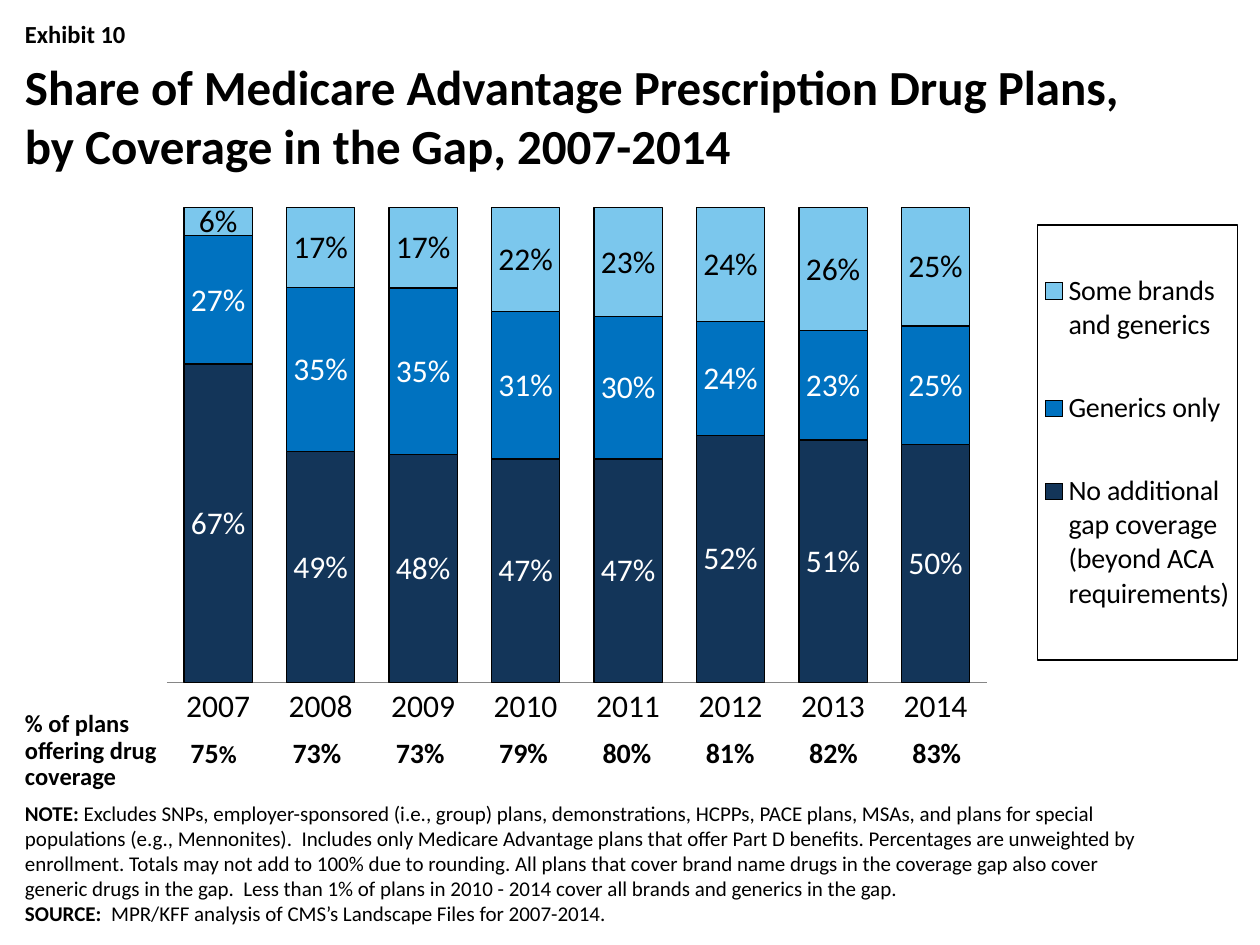
import pptx
import pptx.chart.data
import pptx.dml.color
import pptx.enum.chart
import pptx.enum.text
import pptx.oxml
import pptx.util

PX = 9144
FONT = "Calibri"
BLACK = "000000"
ANCHOR = pptx.enum.text.MSO_ANCHOR
ALIGN = pptx.enum.text.PP_ALIGN
NS = ('xmlns:c="http://schemas.openxmlformats.org/drawingml/2006/chart" '
      'xmlns:a="http://schemas.openxmlformats.org/drawingml/2006/main"')


def rgb(value):
    return pptx.dml.color.RGBColor.from_string(value)


def add_text(paragraphs, x, y, w, h, size=14, anchor=ANCHOR.TOP, align=ALIGN.LEFT, spacing=None):
    s = slide.shapes.add_textbox(x * PX, y * PX, w * PX, h * PX)
    tf = s.text_frame
    tf.word_wrap = True
    tf.vertical_anchor = anchor
    for i, runs in enumerate(paragraphs):
        p = tf.add_paragraph() if i else tf.paragraphs[0]
        p.alignment = align
        p.line_spacing = spacing
        for text, bold, *own_size in runs:
            for j, line in enumerate(text.split("\n")):
                if j:
                    p.add_line_break()
                r = p.add_run()
                r.text = line
                r.font.name = FONT
                r.font.size = pptx.util.Pt(own_size[0] if own_size else size)
                r.font.bold = bold
                r.font.color.rgb = rgb(BLACK)


prs = pptx.Presentation()
prs.slide_width = 1000 * PX
prs.slide_height = 750 * PX
slide = prs.slides.add_slide(prs.slide_layouts[6])

add_text([[("Exhibit 10", True)]], 10, 10, 980, 34)

data = pptx.chart.data.CategoryChartData(number_format="0%")
data.categories = [str(year) for year in range(2007, 2015)]
series = [
    ("No additional gap coverage (beyond ACA requirements)", "133559", "FFFFFF",
     [0.67, 0.49, 0.48, 0.47, 0.47, 0.52, 0.51, 0.50]),
    ("Generics only", "0072C0", "FFFFFF",
     [0.27, 0.35, 0.35, 0.31, 0.30, 0.24, 0.23, 0.25]),
    ("Some brands and generics", "7BC7ED", BLACK,
     [0.06, 0.17, 0.17, 0.22, 0.23, 0.24, 0.26, 0.25]),
]
for name, fill, label, values in series:
    data.add_series(name, values)
chart = slide.shapes.add_chart(
    pptx.enum.chart.XL_CHART_TYPE.COLUMN_STACKED_100,
    10 * PX, 150 * PX, 980 * PX, 520 * PX, data).chart
chart.has_title = False
chart.font.name = FONT
chart.font.size = pptx.util.Pt(18)
chart.font.color.rgb = rgb(BLACK)

plot = chart.plots[0]
plot.gap_width = 50
plot.overlap = 100
plot.vary_by_categories = False
for ser, (name, fill, label, values) in zip(plot.series, series):
    ser.format.fill.solid()
    ser.format.fill.fore_color.rgb = rgb(fill)
    ser.format.line.color.rgb = rgb(BLACK)
    ser.format.line.width = pptx.util.Pt(0.75)
    labels = ser.data_labels
    labels.show_value = True
    labels.number_format = "0%"
    labels.number_format_is_linked = False
    labels.position = pptx.enum.chart.XL_LABEL_POSITION.CENTER
    labels.font.name = FONT
    labels.font.size = pptx.util.Pt(18)
    labels.font.color.rgb = rgb(label)

axis = chart.category_axis
axis.major_tick_mark = pptx.enum.chart.XL_TICK_MARK.NONE
axis.minor_tick_mark = pptx.enum.chart.XL_TICK_MARK.NONE
axis.format.line.color.rgb = rgb("868686")
axis.format.line.width = pptx.util.Pt(0.75)
chart.value_axis.visible = False
chart.value_axis.has_major_gridlines = False
chart.value_axis.minimum_scale = 0
chart.value_axis.maximum_scale = 1

chart.has_legend = True
legend = chart.legend
legend.position = pptx.enum.chart.XL_LEGEND_POSITION.RIGHT
legend.include_in_layout = False
legend.font.name = FONT
legend.font.size = pptx.util.Pt(16)
legend.font.color.rgb = rgb(BLACK)
legend_xml = legend._element
legend_xml.find("{*}txPr").addprevious(pptx.oxml.parse_xml(
    f'<c:spPr {NS}><a:ln w="9525"><a:solidFill><a:srgbClr val="{BLACK}"/>'
    '</a:solidFill></a:ln></c:spPr>'))

plot_xml = chart._chartSpace.find(".//{*}plotArea")
for parent, index, target, box in (
        (plot_xml, 0, '<c:layoutTarget val="inner"/>', (0.125, 0.028, 0.664, 0.725)),
        (legend_xml, 1, "", (0.83, 0.055, 0.162, 0.664))):
    for old in parent.findall("{*}layout"):
        parent.remove(old)
    modes = '<c:xMode val="edge"/><c:yMode val="edge"/>'
    sizes = "".join(f'<c:{key} val="{value}"/>' for key, value in zip("xywh", box))
    parent.insert(index, pptx.oxml.parse_xml(
        f"<c:layout {NS}><c:manualLayout>{target}{modes}{sizes}</c:manualLayout></c:layout>"))

add_text([
    [("NOTE: ", True),
     ("Excludes SNPs, employer-sponsored (i.e., group) plans, demonstrations, HCPPs, PACE plans, "
      "MSAs, and plans for special populations (e.g., Mennonites).  Includes only Medicare "
      "Advantage plans that offer Part D benefits. Percentages are unweighted by enrollment. "
      "Totals may not add to 100% due to rounding. All plans that cover brand name drugs in the "
      "coverage gap also cover generic drugs in the gap.  Less than 1% of plans in 2010 - 2014 "
      "cover all brands and generics in the gap.", False)],
    [("SOURCE:  ", True),
     ("MPR/KFF analysis of CMS’s Landscape Files for 2007-2014.", False)],
], 10, 680, 910, 60, size=12, anchor=ANCHOR.BOTTOM)

add_text([[("Share of Medicare Advantage Prescription Drug Plans, \n"
            "by Coverage in the Gap, 2007-2014", True)]], 10, 40, 980, 100, size=28)

add_text([[("% of plans offering drug coverage", True)]], 10, 560, 150, 75, spacing=0.9)

for i, share in enumerate([75, 73, 73, 79, 80, 81, 82, 83]):
    add_text([[(str(share), True), ("%", True, 16 if i else 14)]],
             132 + 82 * i, 579, 75, 34, size=16, align=ALIGN.CENTER)

prs.save("out.pptx")
